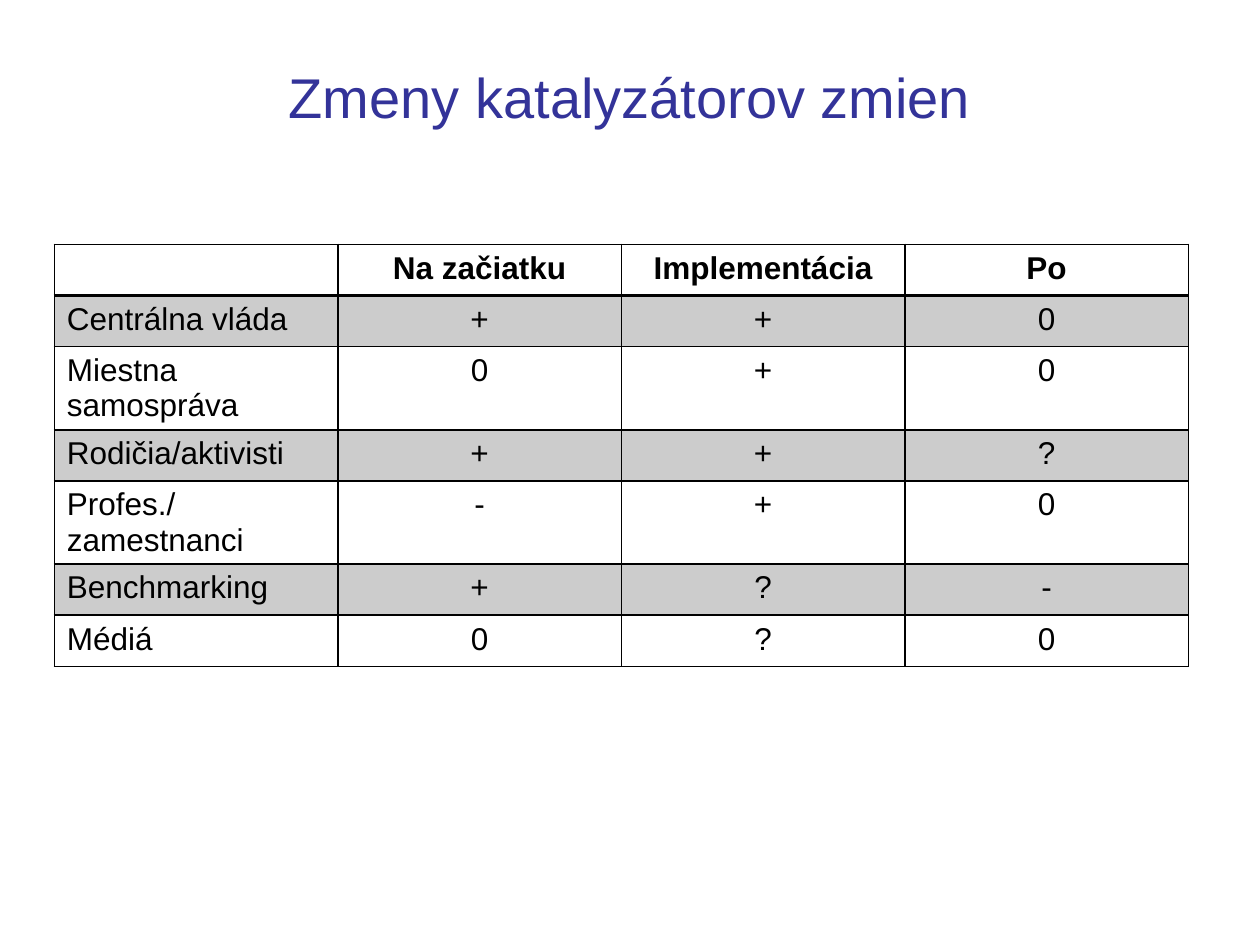
from typing import NamedTuple

from lxml.etree import SubElement
from pptx import Presentation
from pptx.dml.color import RGBColor
from pptx.enum.text import MSO_ANCHOR as Anchor, PP_ALIGN as Align
from pptx.oxml.ns import qn
from pptx.util import Pt

FONT = "Arial"
BLACK = "000000"
BLUE = "333399"
SHADE = 20  # opacity of the banded rows, percent


class Row(NamedTuple):
    label: str
    start: str
    during: str
    after: str


HEAD = Row("", "Na začiatku", "Implementácia", "Po")
ROWS = [
    Row("Centrálna vláda", "+", "+", "0"),
    Row("Miestna samospráva", "0", "+", "0"),
    Row("Rodičia/aktivisti", "+", "+", "?"),
    Row("Profes./zamestnanci", "-", "+", "0"),
    Row("Benchmarking", "+", "?", "-"),
    Row("Médiá", "0", "?", "0"),
]


def color(code: str) -> RGBColor:
    return RGBColor.from_string(code)


def style(para, size: float, code: str, align, bold: bool = False) -> None:
    para.alignment = align
    font = para.font
    font.name, font.size, font.bold = FONT, Pt(size), bold
    font.color.rgb = color(code)


def border(cell, side: str, width: float) -> None:
    line = SubElement(cell._tc.get_or_add_tcPr(), qn(f"a:ln{side}"), w=str(Pt(width)))
    fill = SubElement(line, qn("a:solidFill"))
    SubElement(fill, qn("a:srgbClr"), val=BLACK)


def paint(cell, shaded: bool) -> None:
    if not shaded:
        cell.fill.background()
        return
    cell.fill.solid()
    cell.fill.fore_color.rgb = color(BLACK)
    tint = cell._tc.tcPr.find(f"{qn('a:solidFill')}/{qn('a:srgbClr')}")
    SubElement(tint, qn("a:alpha"), val=str(SHADE * 1000))


def draw_cell(cell, text: str, row: int, col: int) -> None:
    cell.text = text
    align = Align.LEFT if row and not col else Align.CENTER
    style(cell.text_frame.paragraphs[0], 18, BLACK, align, bold=row == 0)
    # The rule under the header is double width
    widths = {"L": 1, "R": 1, "T": 2 if row == 1 else 1, "B": 2 if row == 0 else 1}
    for side, width in widths.items():
        border(cell, side, width)
    paint(cell, shaded=row % 2 == 1)


def draw_table(slide, rows: list[Row]) -> None:
    high = 29.2
    frame = slide.shapes.add_table(len(rows), len(HEAD), Pt(31), Pt(139.7),
                                   Pt(648), Pt(high * len(rows)))
    table = frame.table
    table.first_row = table.horz_banding = False
    for r, row in enumerate(rows):
        table.rows[r].height = Pt(high)
        for c, text in enumerate(row):
            draw_cell(table.cell(r, c), text, r, c)


def main() -> None:
    deck = Presentation()
    deck.slide_width, deck.slide_height = Pt(720), Pt(540)
    slide = deck.slides.add_slide(deck.slide_layouts[5])

    # Title
    title = slide.shapes.title
    title.left, title.top, title.width, title.height = Pt(36), Pt(21.6), Pt(648), Pt(67)
    title.text_frame.text = "Zmeny katalyzátorov zmien"
    title.text_frame.vertical_anchor = Anchor.MIDDLE
    style(title.text_frame.paragraphs[0], 32, BLUE, Align.CENTER)

    # Table of catalysts by phase
    draw_table(slide, [HEAD, *ROWS])
    deck.save("out.pptx")


if __name__ == "__main__":
    main()
